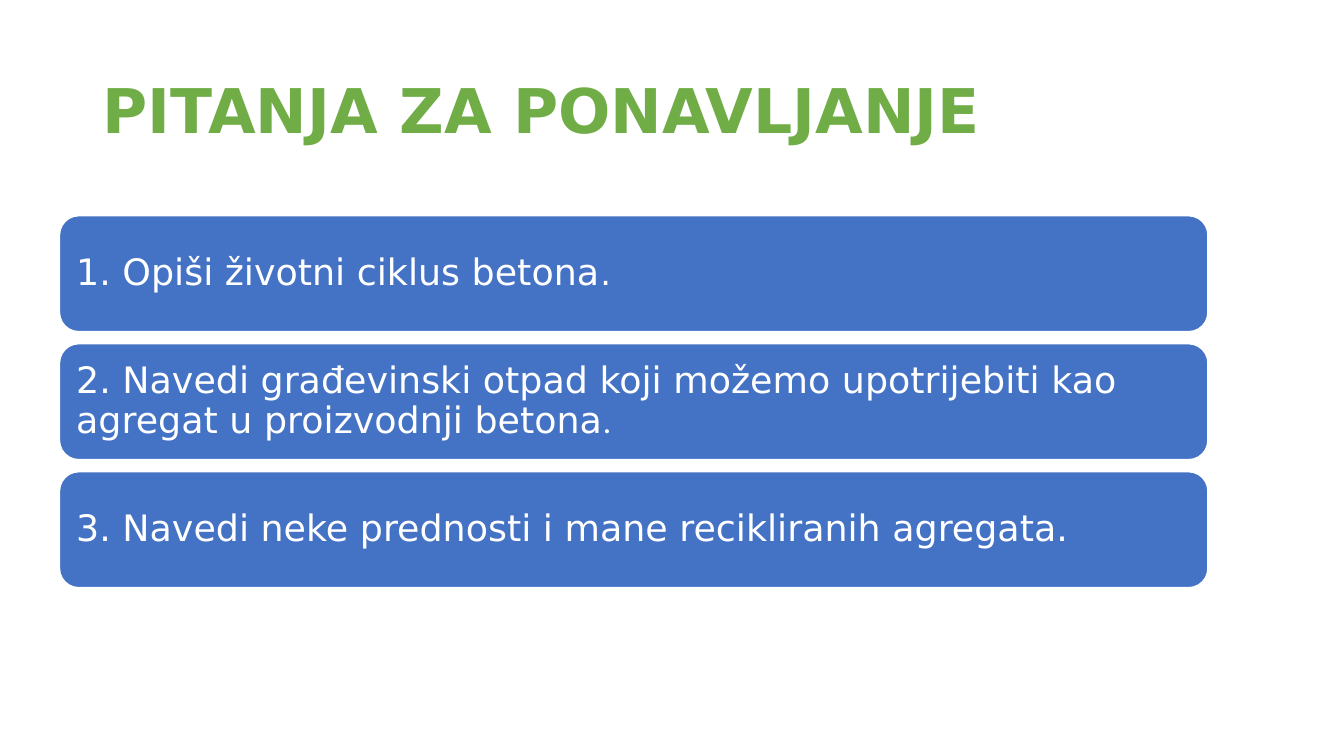
import pptx
import pptx.dml.color
import pptx.enum.shapes
import pptx.enum.text
import pptx.util

Inches = pptx.util.Inches
Pt = pptx.util.Pt
RGBColor = pptx.dml.color.RGBColor
ANCHOR = pptx.enum.text.MSO_ANCHOR
ALIGN = pptx.enum.text.PP_ALIGN

GREEN = RGBColor(0x70, 0xAD, 0x47)
BLUE = RGBColor(0x44, 0x72, 0xC4)
WHITE = RGBColor(0xFF, 0xFF, 0xFF)
FONT = "DejaVu Sans"

QUESTIONS = [
    [("1. Opiši životni ciklus betona", FONT, 26), (".", FONT, 24)],
    [("2. Navedi građevinski otpad koji možemo upotrijebiti kao "
      "agregat u proizvodnji betona", FONT, 26), (".", "Calibri", 24)],
    [("3. Navedi neke prednosti i mane recikliranih agregata.", FONT, 26)],
]


class QuestionSlide:
    def __init__(self, prs):
        self.s = prs.slides.add_slide(prs.slide_layouts[5])

    def title(self, text):
        sp = self.s.shapes.title
        sp.left, sp.top = Inches(0.92), Inches(0.4)
        sp.width, sp.height = Inches(11.5), Inches(1.45)
        tf = sp.text_frame
        tf.text = text
        tf.word_wrap = True
        tf.auto_size = pptx.enum.text.MSO_AUTO_SIZE.NONE
        tf.vertical_anchor = ANCHOR.MIDDLE
        p = tf.paragraphs[0]
        p.alignment = ALIGN.LEFT
        p.line_spacing = 0.9
        p.font.name = FONT
        p.font.size = Pt(44)
        p.font.bold = True
        p.font.color.rgb = GREEN

    def card(self, top, runs):
        sp = self.s.shapes.add_shape(
            pptx.enum.shapes.MSO_SHAPE.ROUNDED_RECTANGLE,
            Inches(0.59), Inches(top), Inches(11.39), Inches(1.15))
        sp.shadow.inherit = False
        sp.fill.solid()
        sp.fill.fore_color.rgb = BLUE
        sp.line.color.rgb = WHITE
        sp.line.width = Pt(1)
        tf = sp.text_frame
        tf.word_wrap = True
        tf.vertical_anchor = ANCHOR.MIDDLE
        tf.margin_left = tf.margin_right = Inches(0.11)
        tf.margin_top = tf.margin_bottom = Inches(0.11)
        p = tf.paragraphs[0]
        p.alignment = ALIGN.LEFT
        p.line_spacing = 0.9
        p.font.color.rgb = WHITE
        for text, font, size in runs:
            r = p.add_run()
            r.text = text
            r.font.name = font
            r.font.size = Pt(size)


def main():
    prs = pptx.Presentation()
    prs.slide_width, prs.slide_height = Inches(13.33), Inches(7.5)
    slide = QuestionSlide(prs)
    slide.title("PITANJA ZA PONAVLJANJE")
    for i, runs in enumerate(QUESTIONS):
        slide.card(2.14 + 1.27 * i, runs)
    prs.save("out.pptx")


if __name__ == "__main__":
    main()
